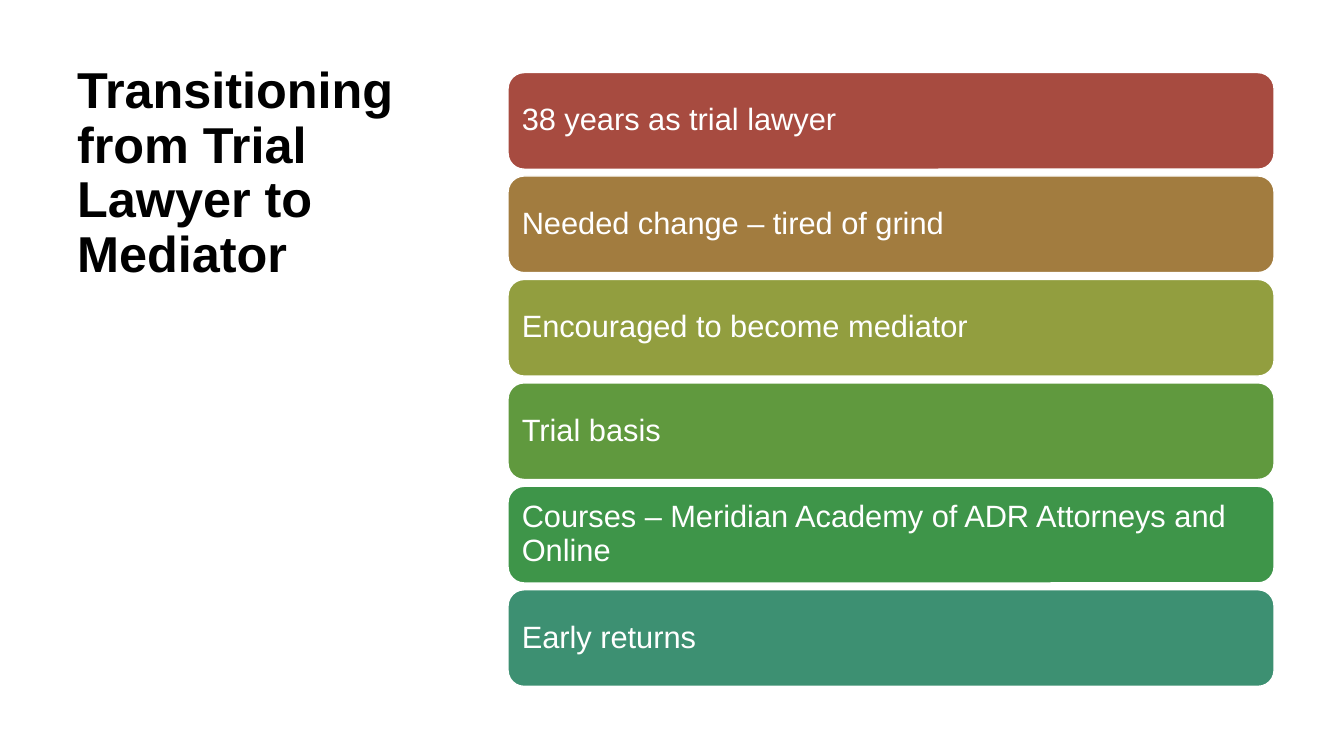
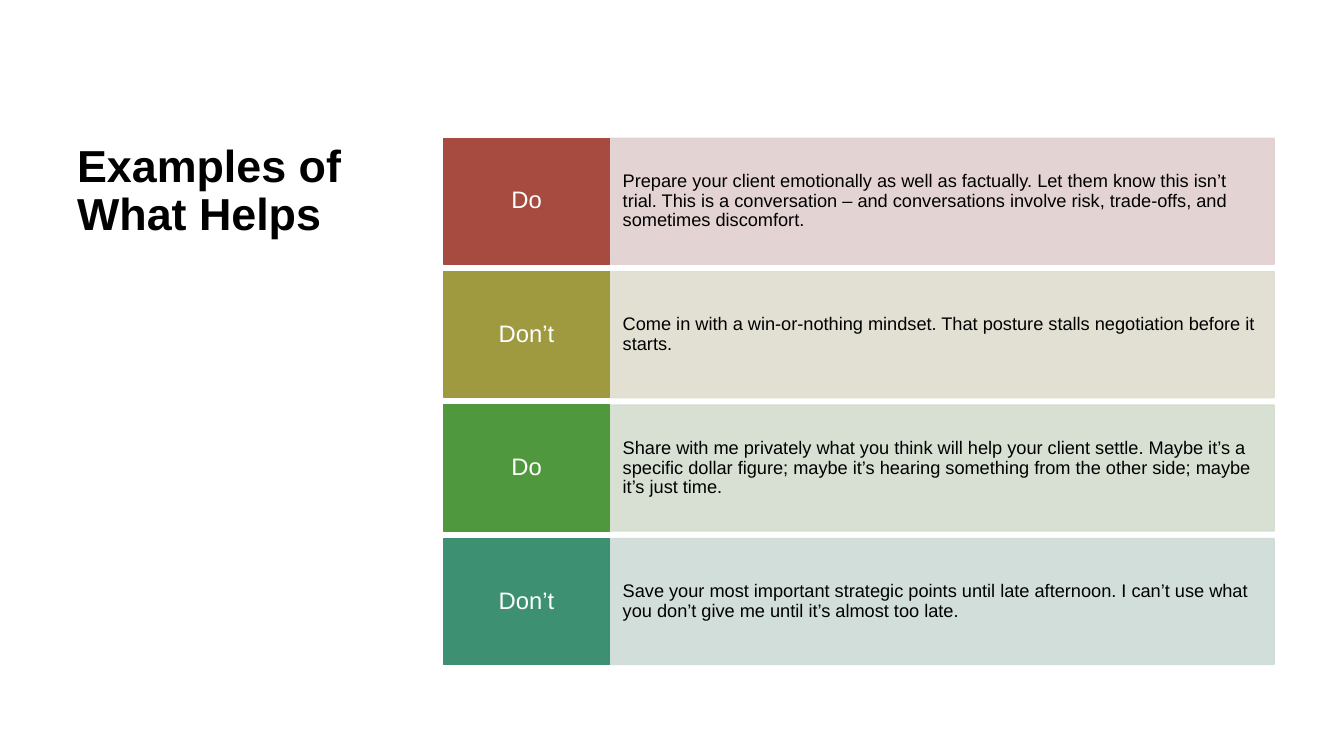
from collections import namedtuple

from lxml.etree import SubElement
from pptx import Presentation
from pptx.dml.color import RGBColor
from pptx.enum.shapes import MSO_SHAPE as Shape
from pptx.enum.text import MSO_ANCHOR as Anchor, PP_ALIGN as Align
from pptx.oxml.ns import qn
from pptx.util import Inches, Pt

Box = namedtuple("Box", "left top width height")

WIDTH, HEIGHT = 13.33, 7.5
FONT = "Arial"
LINE_SPACING = 0.9
TITLE_LEFT = 5
COLORS = {
    "text": "000000", "white": "FFFFFF",
    "red": "A74B40", "brown": "A27C3F", "olive": "929E3F",
    "mustard": "9F9A3F", "grass": "60993E", "leaf": "50983E",
    "green": "3E9549", "teal": "3D9072",
    "pale red": "E1D0CF", "pale mustard": "DFDDCF",
    "pale leaf": "D3DDCE", "pale teal": "CEDBD5",
}

CAREER_STEPS = [
    ("38 years as trial lawyer", "red"),
    ("Needed change – tired of grind", "brown"),
    ("Encouraged to become mediator", "olive"),
    ("Trial basis", "grass"),
    ("Courses – Meridian Academy of ADR Attorneys and Online", "green"),
    ("Early returns", "teal"),
]

ADVICE = [
    ("Do", "red",
     "Prepare your client emotionally as well as factually. Let them know "
     "this isn’t trial. This is a conversation – and conversations involve "
     "risk, trade-offs, and sometimes discomfort."),
    ("Don’t", "mustard",
     "Come in with a win-or-nothing mindset. That posture stalls "
     "negotiation before it starts."),
    ("Do", "leaf",
     "Share with me privately what you think will help your client settle. "
     "Maybe it’s a specific dollar figure; maybe it’s hearing something "
     "from the other side; maybe it’s just time."),
    ("Don’t", "teal",
     "Save your most important strategic points until late afternoon. "
     "I can’t use what you don’t give me until it’s almost too late."),
]


def color(name):
    """Return the named palette colour."""
    return RGBColor.from_string(COLORS[name])


def place(box):
    """Turn a box in percent of the slide into lengths."""
    return (Inches(WIDTH * box.left / 100), Inches(HEIGHT * box.top / 100),
            Inches(WIDTH * box.width / 100), Inches(HEIGHT * box.height / 100))


def split_rows(box, count, gap):
    """Divide a box into equal rows, the gap being a share of row height."""
    height = box.height / (count + gap * (count - 1))
    return [box._replace(top=box.top + index * height * (1 + gap), height=height)
            for index in range(count)]


def write(shape, text, size, ink, align=Align.LEFT, anchor=Anchor.MIDDLE,
          inset=0.1, bold=False):
    """Set one styled, wrapped paragraph in a shape."""
    frame = shape.text_frame
    frame.word_wrap = True
    frame.vertical_anchor = anchor
    frame.margin_left = frame.margin_right = Inches(inset)
    para = frame.paragraphs[0]
    para.text = text
    para.alignment = align
    para.line_spacing = LINE_SPACING
    para.font.name = FONT
    para.font.size = Pt(size)
    para.font.bold = bold
    para.font.color.rgb = color(ink)


def add_panel(page, kind, box, fill, line, opacity=100):
    """Add a flat filled shape with a thin outline."""
    panel = page.shapes.add_shape(kind, *place(box))
    panel.shadow.inherit = False
    panel.fill.solid()
    panel.fill.fore_color.rgb = color(fill)
    panel.line.color.rgb = color(line)
    panel.line.width = Pt(1)
    if opacity < 100:
        for tint in list(panel.element.spPr.iter(qn("a:srgbClr"))):
            SubElement(tint, qn("a:alpha"), val=str(opacity * 1000))
    return panel


def add_title(page, box, text, size):
    """Add the bold heading at the top of its box."""
    title = page.shapes.add_textbox(*place(box))
    write(title, text, size, "text", anchor=Anchor.TOP, bold=True)


def add_bars(page, box, steps):
    """Stack one rounded bar for each step."""
    for row, (text, fill) in zip(split_rows(box, len(steps), 0.07), steps):
        bar = add_panel(page, Shape.ROUNDED_RECTANGLE, row, fill, "white")
        write(bar, text, 22, "white", inset=0.09)


def add_advice(page, box, advice):
    """Stack rows of a strong label beside a pale explanation."""
    label_width = box.width * 0.2
    for row, (label, tone, text) in zip(split_rows(box, len(advice), 0.06), advice):
        pale = "pale " + tone
        body_box = row._replace(left=row.left + label_width,
                                width=row.width - label_width)
        body = add_panel(page, Shape.RECTANGLE, body_box, pale, pale, opacity=90)
        write(body, text, 13, "text", inset=0.13)
        head = add_panel(page, Shape.RECTANGLE, row._replace(width=label_width),
                         tone, tone)
        write(head, label, 17, "white", align=Align.CENTER)


def add_page(deck):
    """Add an empty slide."""
    return deck.slides.add_slide(deck.slide_layouts[6])


def build_transition(deck):
    """Build the slide on the change of career."""
    page = add_page(deck)
    add_title(page, Box(TITLE_LEFT, 8, 28.65, 84.4),
              "Transitioning from Trial Lawyer to Mediator", 36)
    add_bars(page, Box(37.8, 9.6, 57, 81.2), CAREER_STEPS)


def build_examples(deck):
    """Build the slide of dos and don'ts."""
    page = add_page(deck)
    add_title(page, Box(TITLE_LEFT, 18.3, 23.85, 69.6),
              "Examples of What Helps", 32)
    add_advice(page, Box(33, 18.3, 61.8, 69.6), ADVICE)


def main():
    """Build and save the deck."""
    deck = Presentation()
    deck.slide_width = Inches(WIDTH)
    deck.slide_height = Inches(HEIGHT)
    build_transition(deck)
    build_examples(deck)
    deck.save("out.pptx")


if __name__ == "__main__":
    main()
